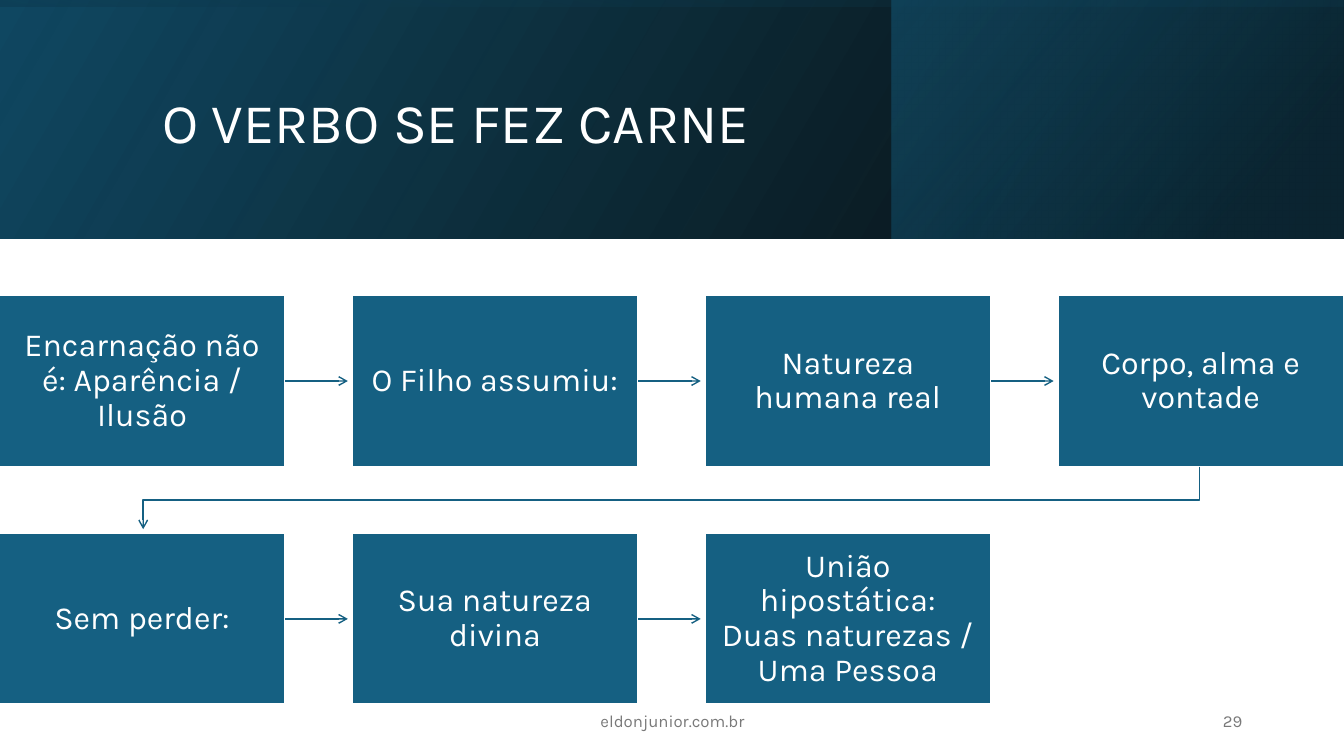
"""Builds the slide "O verbo se fez carne" with a two-row flow of boxes."""
from lxml import etree
from pptx import Presentation
from pptx import util as u
from pptx.dml.color import RGBColor
from pptx.enum import shapes, text
from pptx.oxml import ns

PX = 9144
FONT = "Karla"
BLUE, WHITE, GREY = "156082", "FFFFFF", "797979"
BOX_W, BOX_H = 284, 170
LEFT, TOP, STEP_X, STEP_Y = -1, 293, 350, 236
COLUMNS = 4
STEPS = [
    "Encarnação não é: Aparência / Ilusão",
    "O Filho assumiu:",
    "Natureza humana real",
    "Corpo, alma e vontade",
    "Sem perder:",
    "Sua natureza divina",
    "União hipostática: Duas naturezas / Uma Pessoa",
]
BANDS = [
    ((0, 0, 1333, 237), 0, 330, [(0, "000000", 96), (100, "104862", 100)]),
    ((884, 0, 448, 237), 0, 320, [(19, "0B3041", 68), (100, "156082", 48)]),
    ((548, -548, 237, 1333), 270, 350, [(23, "104862", 16), (99, "000000", 45)]),
]


def px(*values):
    """Turn pixel lengths into EMU."""
    return [u.Emu(v * PX) for v in values]


def rgb(color):
    """Turn a hex string into a colour."""
    return RGBColor.from_string(color)


def add_xml(parent, tag, **attrs):
    """Append a drawing element and return it."""
    return etree.SubElement(parent, ns.qn("a:" + tag), attrs)


def write(s, words, size, color, align, spacing=None):
    """Put one middle-anchored paragraph into a shape."""
    tf = s.text_frame
    tf.text = words
    tf.word_wrap = True
    tf.vertical_anchor = text.MSO_ANCHOR.MIDDLE
    p = tf.paragraphs[0]
    p.alignment = align
    if spacing:
        p.line_spacing = spacing
    r = p.runs[0]
    r.font.name, r.font.size = FONT, u.Pt(size)
    r.font.color.rgb = rgb(color)


def add_rect(slide, box):
    """Add a rectangle without shadow."""
    s = slide.shapes.add_shape(shapes.MSO_SHAPE.RECTANGLE, *px(*box))
    s.shadow.inherit = False
    return s


def add_band(slide, box, turn, angle, stops):
    """Add a mirrored rectangle with a translucent gradient."""
    s = add_rect(slide, box)
    s.rotation = turn
    s.line.fill.background()
    s.fill.background()
    spPr = s._element.spPr
    spPr.find(ns.qn("a:xfrm")).set("flipH", "1")
    grad = add_xml(spPr, "gradFill", rotWithShape="1")
    spPr.replace(spPr.find(ns.qn("a:noFill")), grad)
    stop_list = add_xml(grad, "gsLst")
    for pos, color, alpha in stops:
        stop = add_xml(stop_list, "gs", pos=str(pos * 1000))
        clr = add_xml(stop, "srgbClr", val=color)
        add_xml(clr, "alpha", val=str(alpha * 1000))
    add_xml(grad, "lin", ang=str(angle * 60000), scaled="0")


def add_step(slide, index, words):
    """Add one box of the flow at its place in the grid."""
    row, col = divmod(index, COLUMNS)
    s = add_rect(slide, (LEFT + col * STEP_X, TOP + row * STEP_Y, BOX_W, BOX_H))
    s.fill.solid()
    s.fill.fore_color.rgb = rgb(BLUE)
    s.line.color.rgb = rgb(WHITE)
    s.line.width = u.Pt(1.5)
    tf = s.text_frame
    tf.margin_left, tf.margin_right, tf.margin_top, tf.margin_bottom = px(14, 14, 15, 15)
    write(s, words, 23, WHITE, text.PP_ALIGN.CENTER, 0.9)
    return s


def style_arrow(s):
    """Give a line its colour, width and open arrowhead."""
    s.line.color.rgb = rgb(BLUE)
    s.line.width = u.Pt(1)
    add_xml(s.line._get_or_add_ln(), "tailEnd", type="arrow")


def add_arrow(slide, box):
    """Add a straight arrow that leaves the right side of a box."""
    y = box.top + box.height // 2
    x = box.left + box.width
    s = slide.shapes.add_connector(shapes.MSO_CONNECTOR.STRAIGHT, x, y, x + 62 * PX, y)
    s.begin_connect(box, 3)
    style_arrow(s)
    add_xml(s._element.spPr, "effectLst")


def add_return(slide):
    """Add the bent arrow from the end of row one to the start of row two."""
    start = LEFT + BOX_W // 2 + 1
    end = start + (COLUMNS - 1) * STEP_X - 2
    bottom = TOP + BOX_H
    builder = slide.shapes.build_freeform(end, bottom, scale=PX)
    builder.add_line_segments(
        [(end, bottom + 33), (start, bottom + 33), (start, bottom + 62)], close=False)
    s = builder.convert_to_shape()
    s.shadow.inherit = False
    s.fill.background()
    style_arrow(s)


def add_label(slide, box, words, align):
    """Add a small grey footer text."""
    s = slide.shapes.add_textbox(*px(*box))
    write(s, words, 12, GREY, align)


def add_title(slide, words):
    """Place the title above the bands."""
    s = slide.shapes.title
    s.left, s.top, s.width, s.height = px(151, 38, 1063, 172)
    write(s, words, 40, WHITE, text.PP_ALIGN.LEFT, 0.9)
    slide.shapes._spTree.append(s._element)


def main():
    """Build and save the slide."""
    prs = Presentation()
    prs.slide_width, prs.slide_height = px(1333, 750)
    slide = prs.slides.add_slide(prs.slide_layouts[5])
    for band in BANDS:
        add_band(slide, *band)
    add_title(slide, "O VERBO SE FEZ CARNE")
    boxes = [add_step(slide, i, words) for i, words in enumerate(STEPS)]
    for i, box in enumerate(boxes[:-1]):
        if i == COLUMNS - 1:
            add_return(slide)
        else:
            add_arrow(slide, box)
    add_label(slide, (942, 695, 300, 40), "29", text.PP_ALIGN.RIGHT)
    add_label(slide, (442, 695, 450, 40), "eldonjunior.com.br", text.PP_ALIGN.CENTER)
    prs.save("out.pptx")


if __name__ == "__main__":
    main()
